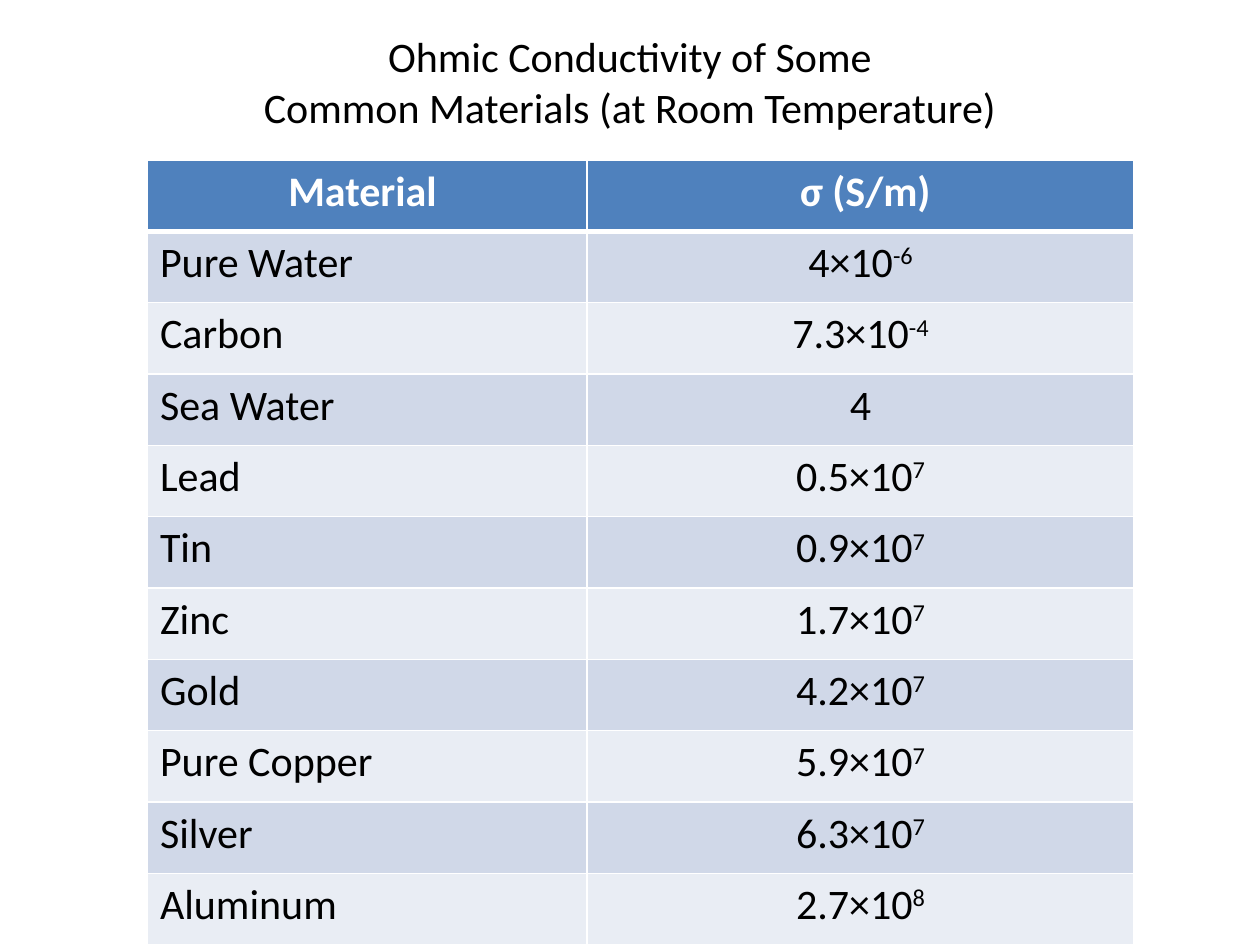
"""Build a slide with a table of the ohmic conductivity of common materials."""
from lxml import etree
from pptx import Presentation
from pptx import util as u
from pptx.dml.color import RGBColor
from pptx.enum import text
from pptx.oxml.ns import qn

BLACK = RGBColor(0x00, 0x00, 0x00)
WHITE = RGBColor(0xFF, 0xFF, 0xFF)
BLUE = RGBColor(0x4F, 0x81, 0xBD)
BANDS = [RGBColor(0xE9, 0xED, 0xF4), RGBColor(0xD0, 0xD8, 0xE8)]

CENTER = text.PP_ALIGN.CENTER
LEFT = text.PP_ALIGN.LEFT
BODY = {"name": "Calibri", "size": u.Pt(24), "bold": False}
HEAD = {**BODY, "bold": True}

ROWS = [
    ("Material ", " σ (S/m)", ""),
    ("Pure Water", "4×10", "-6"),
    ("Carbon", "7.3×10", "-4"),
    ("Sea Water", "4", ""),
    ("Lead", "0.5×10", "7"),
    ("Tin", "0.9×10", "7"),
    ("Zinc", "1.7×10", "7"),
    ("Gold", "4.2×10", "7"),
    ("Pure Copper", "5.9×10", "7"),
    ("Silver", "6.3×10", "7"),
    ("Aluminum", "2.7×10", "8"),
]


def add_run(p, content, fmt, color, baseline=0):
    r = p.add_run()
    r.text = content
    for key, value in fmt.items():
        setattr(r.font, key, value)
    r.font.color.rgb = color
    if baseline:
        r._r.get_or_add_rPr().set("baseline", str(baseline))


def set_borders(cell, widths):
    tcPr = cell._tc.get_or_add_tcPr()
    for i, (side, width) in enumerate(widths.items()):
        ln = etree.Element(qn(f"a:ln{side}"), w=str(u.Pt(width)))
        fill = etree.SubElement(ln, qn("a:solidFill"))
        etree.SubElement(fill, qn("a:srgbClr"), val=str(WHITE))
        tcPr.insert(i, ln)


prs = Presentation()
prs.slide_width = u.Inches(10)
prs.slide_height = u.Inches(7.5)
s = prs.slides.add_slide(prs.slide_layouts[6])

sp = s.shapes.add_textbox(u.Inches(0.5), u.Inches(0.17), u.Inches(9), u.Inches(0.95))
tf = sp.text_frame
tf.word_wrap = True
tf.vertical_anchor = text.MSO_ANCHOR.MIDDLE
p = tf.paragraphs[0]
p.alignment = CENTER
add_run(p, "Ohmic Conductivity of Some", BODY, BLACK)
p.add_line_break()
add_run(p, "Common Materials (at Room Temperature)", BODY, BLACK)

sp = s.shapes.add_table(len(ROWS), 2, u.Inches(1.17), u.Inches(1.27), u.Inches(7.83), u.Inches(6.23))
table = sp.table
for column, width in zip(table.columns, (3.49, 4.34)):
    column.width = u.Inches(width)

for i, (material, value, exponent) in enumerate(ROWS):
    header = i == 0
    fmt, color = (HEAD, WHITE) if header else (BODY, BLACK)
    for j, content in enumerate((material, value)):
        cell = table.cell(i, j)
        cell.fill.solid()
        cell.fill.fore_color.rgb = BLUE if header else BANDS[i % 2]
        set_borders(cell, {"L": 1, "R": 1, "T": 3 if i == 1 else 1, "B": 3 if header else 1})
        p = cell.text_frame.paragraphs[0]
        p.alignment = CENTER if header or j else LEFT
        add_run(p, content, fmt, color)
        if j and exponent:
            add_run(p, exponent, fmt, color, 30000)

prs.save("out.pptx")
